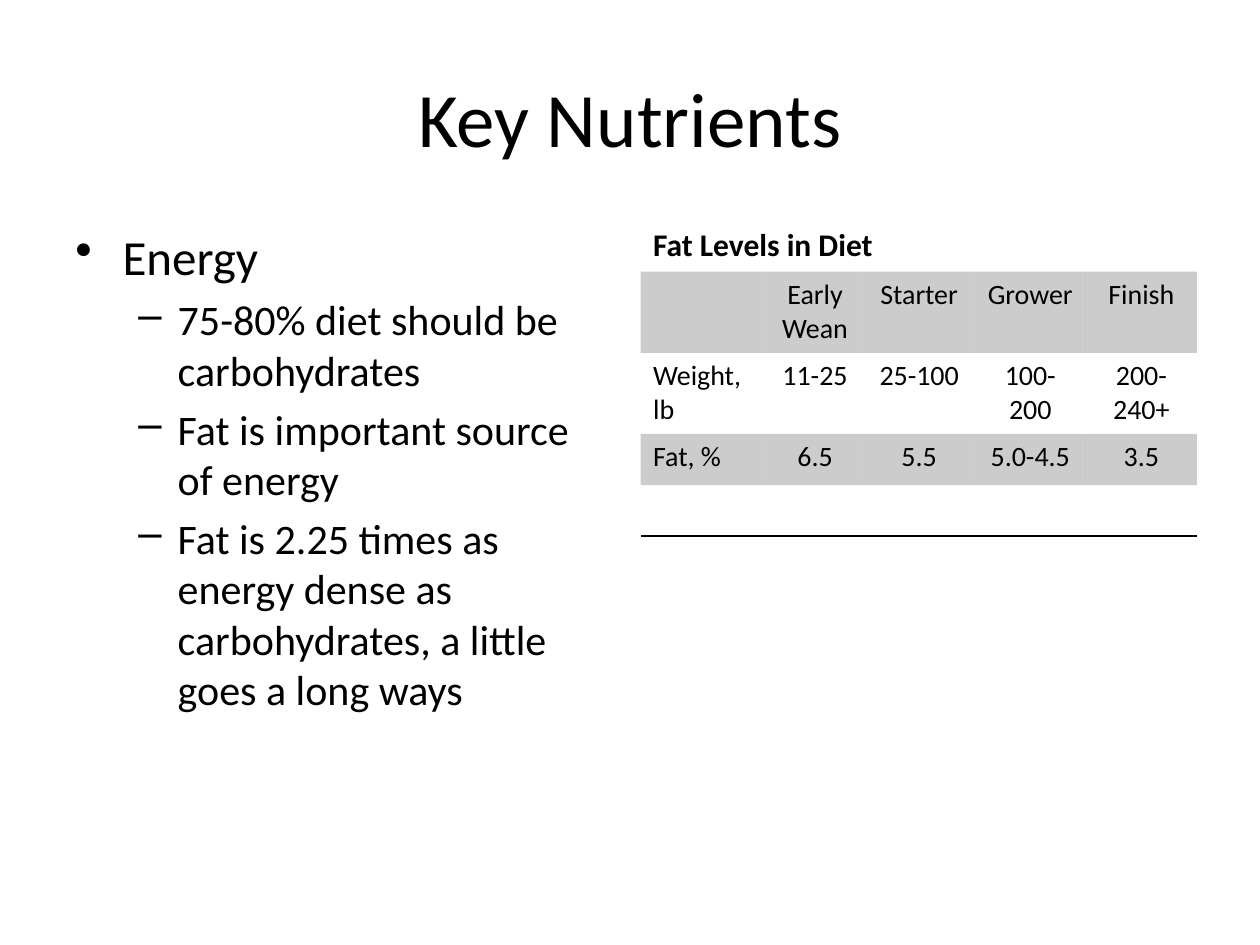
from dataclasses import dataclass

from lxml.etree import SubElement
from pptx import Presentation
from pptx.dml.color import RGBColor
from pptx.enum.text import MSO_ANCHOR, PP_ALIGN
from pptx.oxml.ns import qn
from pptx.util import Pt


@dataclass(frozen=True)
class Theme:
    font: str = "Calibri"
    ink: RGBColor = RGBColor(0, 0, 0)
    band_opacity: int = 20
    title_size: int = 44
    topic_size: int = 28
    point_size: int = 24
    caption_size: int = 18
    cell_size: int = 16


THEME = Theme()
PLAIN_TABLE_STYLE = "{2D5ABB26-0587-4C30-8999-92F81FD0307C}"

POINTS = [
    "75-80% diet should be carbohydrates",
    "Fat is important source of energy",
    "Fat is 2.25 times as energy dense as carbohydrates, a little goes a long ways",
]
FAT_LEVELS = [
    ["Fat Levels in Diet", "", "", "", ""],
    ["", "Early Wean", "Starter", "Grower", "Finish"],
    ["Weight, lb", "11-25", "25-100", "100-200", "200-240+"],
    ["Fat, %", "6.5", "5.5", "5.0-4.5", "3.5"],
    ["", "", "", "", ""],
]
COLUMN_WIDTHS = [72, 55.5, 63.5, 63.5, 63.5]
ROW_HEIGHTS = [29.2, 46.4, 46.4, 29.2, 29.2]
BANDED_ROWS = (1, 3)


def style_paragraph(para, size, align=PP_ALIGN.LEFT, bold=False):
    para.alignment = align
    para.font.name = THEME.font
    para.font.size = Pt(size)
    para.font.bold = bold
    para.font.color.rgb = THEME.ink


def place(shape, left, top, width, height):
    shape.left, shape.top = Pt(left), Pt(top)
    shape.width, shape.height = Pt(width), Pt(height)


def add_title(page, text):
    title = page.shapes.title
    place(title, 36, 21.6, 648, 90)
    title.text_frame.text = text
    title.text_frame.vertical_anchor = MSO_ANCHOR.MIDDLE
    style_paragraph(title.text_frame.paragraphs[0], THEME.title_size, PP_ALIGN.CENTER)


def add_bullet(para, text, mark, size, margin, hanging):
    para.text = text
    style_paragraph(para, size)
    para.space_before = Pt(size * 0.2)
    properties = para._p.get_or_add_pPr()
    properties.set("marL", str(Pt(margin)))
    properties.set("indent", str(-Pt(hanging)))
    bullet = properties.makeelement(qn("a:buChar"), {"char": mark})
    properties.find(qn("a:defRPr")).addprevious(bullet)


def add_bullet_list(page, topic, points):
    box = page.shapes.add_textbox(Pt(36), Pt(126), Pt(318), Pt(356.4))
    frame = box.text_frame
    frame.word_wrap = True
    add_bullet(frame.paragraphs[0], topic, "•", THEME.topic_size, 27, 27)
    for point in points:
        para = frame.add_paragraph()
        para.level = 1
        add_bullet(para, point, "–", THEME.point_size, 58.5, 22.5)


def fill_band(cell):
    cell.fill.solid()
    cell.fill.fore_color.rgb = THEME.ink
    color = cell._tc.tcPr.find(f".//{qn('a:srgbClr')}")
    SubElement(color, qn("a:alpha"), val=str(THEME.band_opacity * 1000))


def rule_below(cell):
    properties = cell._tc.get_or_add_tcPr()
    line = properties.makeelement(qn("a:lnB"), {"w": str(Pt(1))})
    properties.insert(0, line)
    fill = SubElement(line, qn("a:solidFill"))
    SubElement(fill, qn("a:srgbClr"), val=str(THEME.ink))


def format_cell(cell, text, row, column):
    cell.text = text
    para = cell.text_frame.paragraphs[0]
    is_caption = row == 0
    size = THEME.caption_size if is_caption else THEME.cell_size
    align = PP_ALIGN.CENTER if column else PP_ALIGN.LEFT
    style_paragraph(para, size, align, is_caption)
    if row in BANDED_ROWS:
        fill_band(cell)
    else:
        cell.fill.background()
    if row == len(FAT_LEVELS) - 1:
        rule_below(cell)


def add_fat_table(page):
    frame = page.shapes.add_table(
        len(ROW_HEIGHTS), len(COLUMN_WIDTHS), Pt(366), Pt(126),
        Pt(sum(COLUMN_WIDTHS)), Pt(sum(ROW_HEIGHTS)),
    )
    table = frame.table
    table.first_row = table.horz_banding = False
    table._tbl.tblPr.find(qn("a:tableStyleId")).text = PLAIN_TABLE_STYLE
    for column, width in zip(table.columns, COLUMN_WIDTHS):
        column.width = Pt(width)
    for row, height in zip(table.rows, ROW_HEIGHTS):
        row.height = Pt(height)
    for row, texts in enumerate(FAT_LEVELS):
        for column, text in enumerate(texts):
            format_cell(table.cell(row, column), text, row, column)
    table.cell(0, 0).merge(table.cell(0, len(COLUMN_WIDTHS) - 1))


def main():
    deck = Presentation()
    deck.slide_width, deck.slide_height = Pt(720), Pt(540)
    page = deck.slides.add_slide(deck.slide_layouts[5])
    add_title(page, "Key Nutrients")
    add_bullet_list(page, "Energy", POINTS)
    add_fat_table(page)
    deck.save("out.pptx")


if __name__ == "__main__":
    main()
